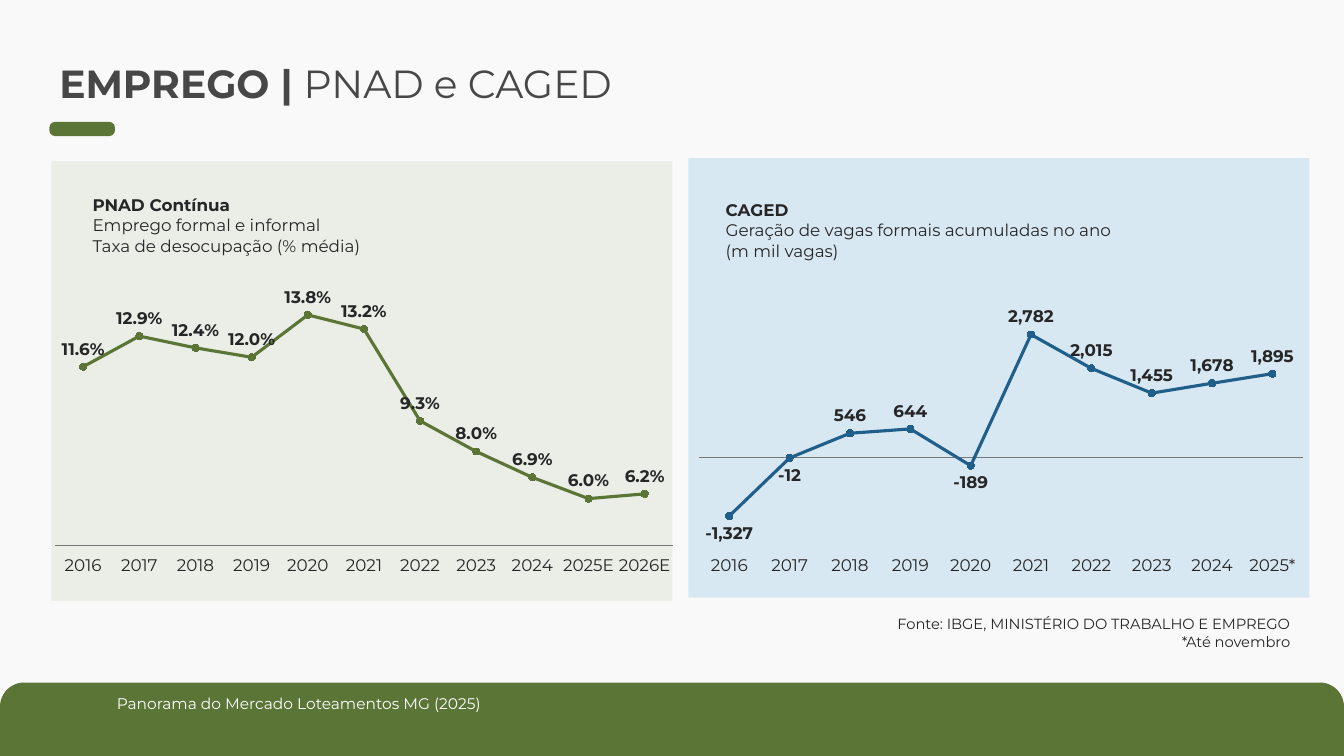
from lxml.etree import SubElement
from pptx import Presentation
from pptx.chart.data import CategoryChartData
from pptx.dml.color import RGBColor
from pptx.enum.chart import (XL_CHART_TYPE, XL_LABEL_POSITION, XL_MARKER_STYLE,
                             XL_TICK_LABEL_POSITION, XL_TICK_MARK)
from pptx.enum.shapes import MSO_SHAPE
from pptx.enum.text import MSO_ANCHOR, PP_ALIGN
from pptx.oxml.ns import qn
from pptx.util import Pt

COLORS = {
    "background": "F9F9F9", "green": "5B7537", "pale green": "EAEEE6",
    "blue": "1F5F8A", "pale blue": "D8E8F2", "red": "E0533A",
    "text": "262626", "title": "474747", "axis": "797979", "white": "FFFFFF",
}
FONT = "Montserrat"


def rgb(name):
    """Return the named colour."""
    return RGBColor.from_string(COLORS[name])


def style_font(font, size, color="text", bold=False, name=FONT):
    """Set the face, size, weight and colour of a font."""
    font.name, font.size, font.bold = name, Pt(size), bold
    font.color.rgb = rgb(color)


def add_block(slide, box, color, radius=None):
    """Add a plain filled rectangle, rounded if a radius ratio is given."""
    preset = MSO_SHAPE.RECTANGLE if radius is None else MSO_SHAPE.ROUNDED_RECTANGLE
    block = slide.shapes.add_shape(preset, *map(Pt, box))
    if radius is not None:
        block.adjustments[0] = radius
    block.shadow.inherit = False
    block.fill.solid()
    block.fill.fore_color.rgb = rgb(color)
    block.line.fill.background()


def add_text(slide, box, lines, size=12, color="text", align=PP_ALIGN.LEFT,
             anchor=MSO_ANCHOR.TOP, spacing=None):
    """Add a text box of lines, each a list of (text, bold) runs."""
    frame = slide.shapes.add_textbox(*map(Pt, box)).text_frame
    frame.word_wrap = True
    frame.vertical_anchor = anchor
    for index, runs in enumerate(lines):
        paragraph = frame.paragraphs[0] if index == 0 else frame.add_paragraph()
        paragraph.alignment = align
        paragraph.line_spacing = spacing
        for text, bold in runs:
            run = paragraph.add_run()
            run.text = text
            style_font(run.font, size, color, bold)


def place_plot(chart, plot_box):
    """Fix the inner plot area at fractions of the chart frame."""
    plot_area = chart._chartSpace.chart.plotArea
    for old_layout in plot_area.findall(qn("c:layout")):
        plot_area.remove(old_layout)
    layout = SubElement(plot_area, qn("c:layout"))
    plot_area.insert(0, layout)
    manual = SubElement(layout, qn("c:manualLayout"))
    settings = [("layoutTarget", "inner"), ("xMode", "edge"), ("yMode", "edge")]
    settings += zip("xywh", plot_box)
    for tag, value in settings:
        SubElement(manual, qn(f"c:{tag}")).set("val", str(value))


def style_line(line, color, width):
    """Set the colour and width of a line."""
    line.color.rgb = rgb(color)
    line.width = Pt(width)


def style_marker(marker, color):
    """Draw a small round marker in one colour."""
    marker.style, marker.size = XL_MARKER_STYLE.CIRCLE, 5
    marker.format.fill.solid()
    marker.format.fill.fore_color.rgb = rgb(color)
    marker.format.line.color.rgb = rgb(color)


def add_line_chart(slide, box, years, values, color, number_format, limits, plot_box):
    """Add a labelled line chart and return its series."""
    chart_data = CategoryChartData(number_format=number_format)
    chart_data.categories = years
    chart_data.add_series("Series 1", values)
    chart = slide.shapes.add_chart(
        XL_CHART_TYPE.LINE_MARKERS, *map(Pt, box), chart_data).chart
    chart.has_legend = chart.has_title = False
    style_font(chart.font, 10, name="Lato")
    place_plot(chart, plot_box)

    year_axis, value_axis = chart.category_axis, chart.value_axis
    year_axis.tick_label_position = XL_TICK_LABEL_POSITION.LOW
    year_axis.major_tick_mark = year_axis.minor_tick_mark = XL_TICK_MARK.NONE
    style_font(year_axis.tick_labels.font, 12)
    style_line(year_axis.format.line, "axis", 0.75)
    value_axis.minimum_scale, value_axis.maximum_scale = limits
    value_axis.has_major_gridlines = False
    value_axis.visible = False

    plot = chart.plots[0]
    plot.vary_by_categories = False
    series = plot.series[0]
    series.smooth = False
    style_line(series.format.line, color, 2.25)
    style_marker(series.marker, color)
    labels = series.data_labels
    labels.show_value = True
    labels.position = XL_LABEL_POSITION.ABOVE
    labels.number_format = number_format
    labels.number_format_is_linked = False
    style_font(labels.font, 12, bold=True)
    return series


def mark_losses(series, color):
    """Label negative years below the line and redden the first two."""
    for index, value in enumerate(series.values):
        if value < 0:
            point = series.points[index]
            style_font(point.data_label.font, 12, bold=True)
            point.data_label.position = XL_LABEL_POSITION.BELOW
            style_line(point.format.line, color, 2.25)
            style_marker(point.marker, "red" if index < 2 else color)


def main():
    """Build the employment slide."""
    deck = Presentation()
    deck.slide_width, deck.slide_height = Pt(960), Pt(540)
    slide = deck.slides.add_slide(deck.slide_layouts[6])
    slide.background.fill.solid()
    slide.background.fill.fore_color.rgb = rgb("background")

    add_block(slide, (0, 487.5, 960, 34.5), "green", 0.5)
    add_block(slide, (0, 505.5, 960, 34.5), "green")
    add_block(slide, (491.8, 113, 443.5, 314), "pale blue")
    add_block(slide, (36.8, 115.2, 443.5, 314), "pale green")

    unemployment = [0.116, 0.129, 0.124, 0.12, 0.138, 0.132,
                    0.093, 0.08, 0.069, 0.06, 0.062]
    years = [str(year) for year in range(2016, 2025)]
    add_line_chart(slide, (3.6, 148.3, 483.8, 287.3), years + ["2025E", "2026E"],
                   unemployment, "green", "0.0%", (0.04, 0.16),
                   (0.074, 0.138, 0.912, 0.703))
    add_text(slide, (59, 123.8, 483.8, 74.2),
             [[("PNAD Contínua", True)], [("Emprego formal e informal", False)],
              [("Taxa de desocupação (% média)", False)]], anchor=MSO_ANCHOR.MIDDLE)

    jobs = [-1327, -12, 546, 644, -189, 2782, 2015, 1455, 1678, 1895]
    job_series = add_line_chart(slide, (493.2, 148.3, 443.5, 287.3), years + ["2025*"],
                                jobs, "blue", "#,##0", (-2000, 4000),
                                (0.014, 0.182, 0.972, 0.659))
    mark_losses(job_series, "blue")
    add_text(slide, (511.2, 127.4, 431.3, 74.2),
             [[("CAGED", True)],
              [("Geração de vagas formais acumuladas no ano", False)],
              [("(m mil vagas)", False)]], anchor=MSO_ANCHOR.MIDDLE)

    add_text(slide, (35.3, 18.7, 973.4, 85),
             [[("EMPREGO | ", True), ("PNAD e CAGED", False)]], size=28,
             color="title", anchor=MSO_ANCHOR.MIDDLE, spacing=0.9)
    add_block(slide, (35.3, 87.1, 46.8, 10.1), "green", 0.39)
    add_text(slide, (445, 435.6, 483.8, 32.4),
             [[("Fonte: IBGE, MINISTÉRIO DO TRABALHO E EMPREGO", False)],
              [("*Até novembro", False)]], size=10.5, align=PP_ALIGN.RIGHT)
    add_text(slide, (76.3, 492.5, 505.4, 20.9),
             [[("Panorama do Mercado Loteamentos MG (2025)", False)]],
             size=11, color="white")
    deck.save("out.pptx")


if __name__ == "__main__":
    main()
